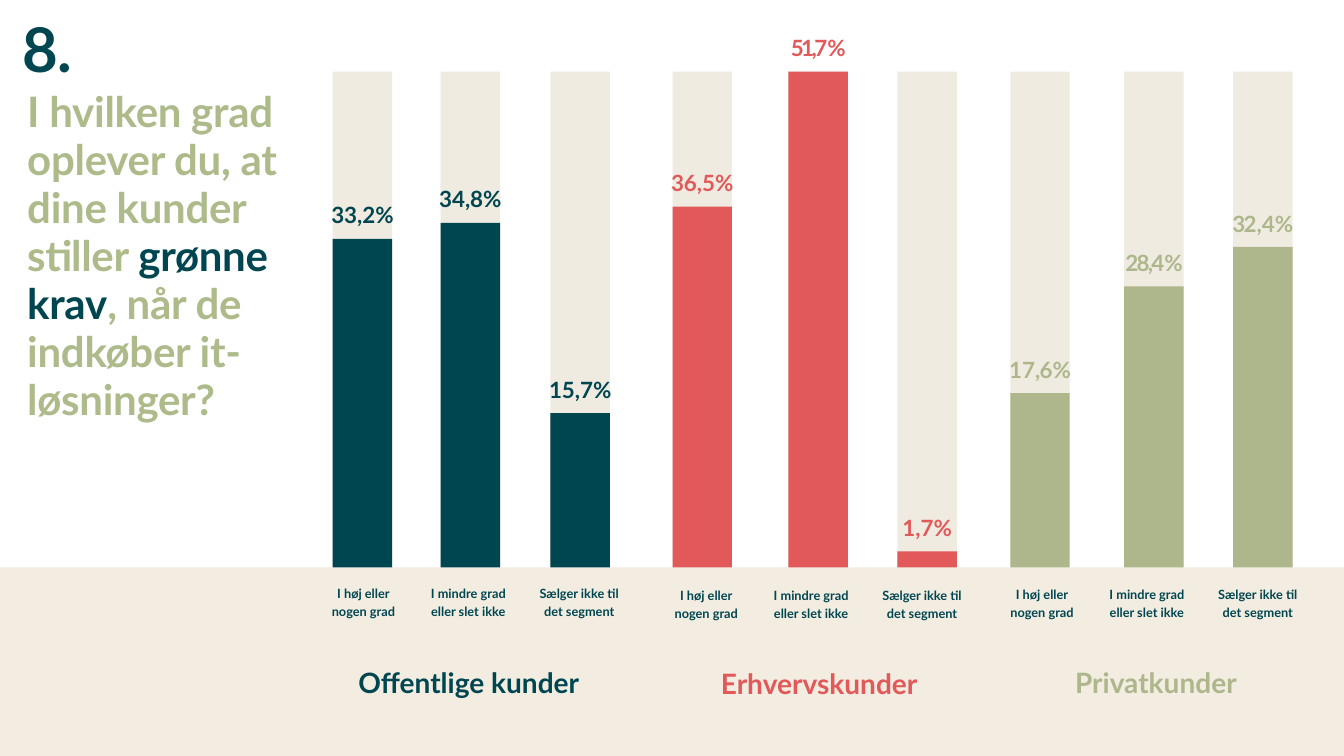
import pptx
import pptx.util
import pptx.dml.color
import pptx.enum.shapes
import pptx.enum.text
from pptx.util import Inches, Pt

RGB = pptx.dml.color.RGBColor.from_string
ALIGN = pptx.enum.text.PP_ALIGN


class Theme:
    font = "Lato"
    teal, red, green = "004650", "E15959", "AEB78B"
    quest, track, floor = "ADBA8A", "F0EBE1", "F2ECE1"
    head, ask, group, value, small = 44, 30, 20, 16, 9.1


def rect(left, top, width, height, color):
    box = slide.shapes.add_shape(
        pptx.enum.shapes.MSO_SHAPE.RECTANGLE,
        Inches(left), Inches(top), Inches(width), Inches(height))
    box.shadow.inherit = False
    box.fill.solid()
    box.fill.fore_color.rgb = RGB(color)
    box.line.fill.background()


def write(place, runs, size, align=ALIGN.CENTER, space=None, box=None):
    """Fill a text box with runs of (text, colour, letter spacing in points)."""
    box = box or slide.shapes.add_textbox(0, 0, 0, 0)
    box.left, box.top, box.width, box.height = map(Inches, place)
    frame = box.text_frame
    frame.word_wrap = True
    frame.auto_size = pptx.enum.text.MSO_AUTO_SIZE.NONE
    frame.vertical_anchor = pptx.enum.text.MSO_ANCHOR.TOP
    frame.margin_left = frame.margin_right = frame.margin_bottom = 0
    frame.margin_top = Inches(0.01)
    para = frame.paragraphs[0]
    para.alignment = align
    para.line_spacing = space
    para.font.name, para.font.size, para.font.bold = Theme.font, Pt(size), True
    for text, color, gap in runs:
        for row, line in enumerate(text.split("\n")):
            if row:
                para.add_line_break()
            run = para.add_run()
            run.text = line
            run.font.color.rgb = RGB(color)
            if gap:
                run.font._element.set("spc", str(round(gap * 100)))


deck = pptx.Presentation()
deck.slide_width, deck.slide_height = Inches(13.33), Inches(7.5)
slide = deck.slides.add_slide(deck.slide_layouts[5])

# Number and question
write((0.22, 0.1, 1.15, 0.75), [("8.", Theme.teal, 0)], Theme.head,
      ALIGN.LEFT, box=slide.shapes.title)
write((0.27, 0.86, 2.61, 3.35), [
    ("I hvilken grad oplever du, at dine kunder stiller ", Theme.quest, -0.2),
    ("grønne krav", Theme.teal, -0.2),
    (", når de indkøber it-løsninger?", Theme.quest, -0.2),
], Theme.ask, ALIGN.LEFT, Pt(34.3))

# Floor panel under the bars
base = 5.63
rect(0, base, 13.33, 7.5 - base, Theme.floor)

# Customer groups: name, colour, name place, first caption left, caption top,
# bars as (left, top, value runs with letter spacing)
groups = [
    ("Offentlige kunder", Theme.teal, (3.46, 6.53, 2.38, 0.36), 3.1, 5.77, [
        (3.3, 2.37, [("33,2%", 0)]),
        (4.37, 2.21, [("34,8%", 0)]),
        (5.46, 4.1, [("15,7%", 0)])]),
    ("Erhvervskunder", Theme.red, (7.09, 6.54, 2.07, 0.36), 6.5, 5.79, [
        (6.67, 2.05, [("36,5%", 0)]),
        (7.82, 0.71, [("51,7", -1.8), ("%", 0)]),
        (8.9, 5.47, [("1,7%", 0)])]),
    ("Privatkunder", Theme.green, (10.65, 6.53, 1.63, 0.36), 9.83, 5.78, [
        (10.02, 3.9, [("17", 0), (",6", -0.5), ("%", 0)]),
        (11.15, 2.84, [("28,4", -1.2), ("%", 0)]),
        (12.23, 2.45, [("32", -1.2), (",4%", 0)])]),
]
answers = [(0, "I høj eller\nnogen grad"),
           (1.04, "I mindre grad\neller slet ikke"),
           (2.14, "Sælger ikke til\ndet segment")]
wide, peak = 0.59, 0.71

for name, color, place, start, low, bars in groups:
    for (left, top, value), (shift, answer) in zip(bars, answers):
        # Track, bar, value and caption
        rect(left, peak, wide, base - peak, Theme.track)
        rect(left, top, wide, base - top, color)
        write((left + wide / 2 - 0.41, top - 0.38, 0.82, 0.28),
              [(text, color, gap) for text, gap in value], Theme.value)
        write((start + shift, low, 1.01, 0.36), [(answer, Theme.teal, 0)],
              Theme.small, space=1.2)
    write(place, [(name, color, 0)], Theme.group, space=1.19)

deck.save("out.pptx")
